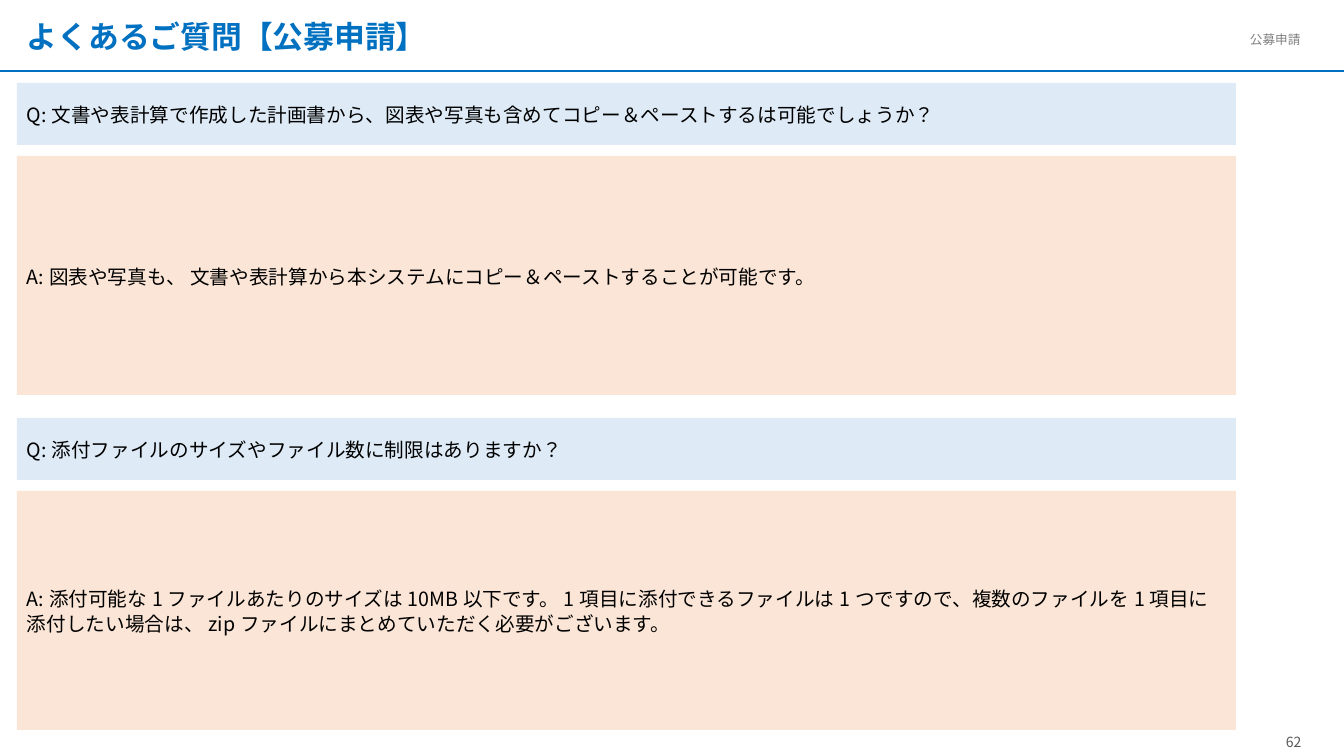
from lxml.etree import SubElement
from pptx import Presentation
from pptx.dml.color import RGBColor
from pptx.enum.lang import MSO_LANGUAGE_ID
from pptx.enum.shapes import MSO_CONNECTOR, MSO_SHAPE
from pptx.enum.text import MSO_ANCHOR, MSO_AUTO_SIZE, PP_ALIGN
from pptx.oxml.ns import qn
from pptx.util import Emu, Pt

BLUE = RGBColor(0x00, 0x70, 0xC0)
BLACK = RGBColor(0x00, 0x00, 0x00)
GRAY = RGBColor(0x80, 0x80, 0x80)
DARK_GRAY = RGBColor(0x59, 0x59, 0x59)
QUESTION_FILL = RGBColor(0xDE, 0xEB, 0xF7)
ANSWER_FILL = RGBColor(0xFB, 0xE5, 0xD6)

SLIDE_WIDTH = 1344
SLIDE_HEIGHT = 756
PIXELS_PER_INCH = 100.8
FONT = "Noto Sans CJK JP"
LEFT = 17
BOX_WIDTH = 1219
QUESTION_HEIGHT = 62
ANSWER_HEIGHT = 239
ANSWER_OFFSET = 73
FIRST_TOP = 83
PAIR_PITCH = 335

QUESTIONS_AND_ANSWERS = [
    (
        "Q:文書や表計算で作成した計画書から、図表や写真も含めてコピー＆ペーストするは可能でしょうか？",
        "A:図表や写真も、 文書や表計算から本システムにコピー＆ペーストすることが可能です。",
    ),
    (
        "Q:添付ファイルのサイズやファイル数に制限はありますか？",
        "A:添付可能な1ファイルあたりのサイズは10MB以下です。1項目に添付できるファイルは1つですので、"
        "複数のファイルを1項目に添付したい場合は、zipファイルにまとめていただく必要がございます。",
    ),
]


def px(length):
    return Emu(round(length * 914400 / PIXELS_PER_INCH))


def write_text(shape, text, size=14, color=BLACK, bold=False, align=PP_ALIGN.LEFT,
               anchor=MSO_ANCHOR.MIDDLE, spacing=1.0, margin=10,
               auto_size=MSO_AUTO_SIZE.NONE):
    frame = shape.text_frame
    frame.word_wrap = True
    frame.auto_size = auto_size
    frame.vertical_anchor = anchor
    frame.margin_left = px(margin)
    frame.margin_right = px(10)
    frame.margin_top = frame.margin_bottom = px(5)
    paragraph = frame.paragraphs[0]
    paragraph.alignment = align
    paragraph.line_spacing = spacing
    run = paragraph.add_run()
    run.text = text
    font = run.font
    font.name = FONT
    font.size = Pt(size)
    font.bold = bold
    font.color.rgb = color
    font.language_id = MSO_LANGUAGE_ID.JAPANESE
    SubElement(run._r.get_or_add_rPr(), qn("a:ea")).set("typeface", FONT)


class SlideBuilder:
    def __init__(self, presentation):
        self.slide = presentation.slides.add_slide(presentation.slide_layouts[5])
        self.shapes = self.slide.shapes

    def title(self, text, left, top, width, height, **text_format):
        shape = self.shapes.title
        shape.left, shape.top = px(left), px(top)
        shape.width, shape.height = px(width), px(height)
        write_text(shape, text, **text_format)

    def label(self, text, left, top, width, height, **text_format):
        shape = self.shapes.add_textbox(px(left), px(top), px(width), px(height))
        write_text(shape, text, **text_format)

    def box(self, text, top, height, fill):
        shape = self.shapes.add_shape(
            MSO_SHAPE.RECTANGLE, px(LEFT), px(top), px(BOX_WIDTH), px(height))
        shape.shadow.inherit = False
        shape.fill.solid()
        shape.fill.fore_color.rgb = fill
        shape.line.fill.background()
        write_text(shape, text, spacing=Pt(18))

    def rule(self, top, color, width):
        connector = self.shapes.add_connector(
            MSO_CONNECTOR.STRAIGHT, px(0), px(top), px(SLIDE_WIDTH), px(top))
        connector.line.color.rgb = color
        connector.line.width = Pt(width)
        SubElement(connector._element.spPr, qn("a:effectLst"))


def main():
    presentation = Presentation()
    presentation.slide_width = px(SLIDE_WIDTH)
    presentation.slide_height = px(SLIDE_HEIGHT)
    builder = SlideBuilder(presentation)
    builder.rule(71, BLUE, 2)
    builder.label("62", 1259, 729, 69, 27, size=10, color=DARK_GRAY,
                  align=PP_ALIGN.CENTER, anchor=MSO_ANCHOR.TOP,
                  auto_size=MSO_AUTO_SIZE.SHAPE_TO_FIT_TEXT)
    builder.label("公募申請", 1221, 0, 123, 71, size=9, color=GRAY,
                  spacing=1.5, margin=29)
    builder.title("よくあるご質問【公募申請】", LEFT, 12, 844, 49,
                  size=22, color=BLUE, bold=True)
    for index, (question, answer) in enumerate(QUESTIONS_AND_ANSWERS):
        top = FIRST_TOP + index * PAIR_PITCH
        builder.box(question, top, QUESTION_HEIGHT, QUESTION_FILL)
        builder.box(answer, top + ANSWER_OFFSET, ANSWER_HEIGHT, ANSWER_FILL)
    presentation.save("out.pptx")


if __name__ == "__main__":
    main()
